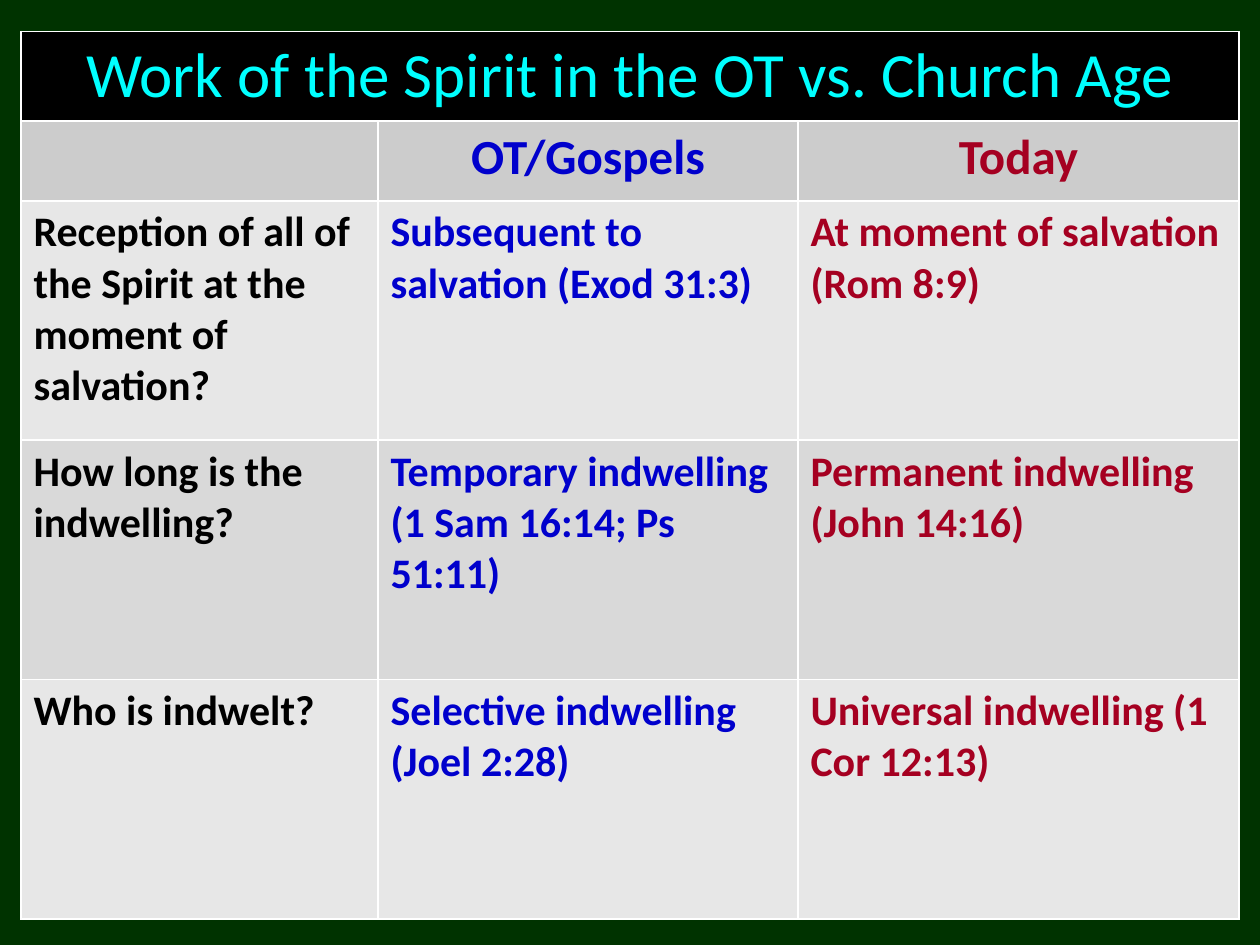
from lxml.etree import SubElement as Sub
from pptx import Presentation
from pptx.dml.color import RGBColor
from pptx.enum.text import MSO_ANCHOR as Anchor, PP_ALIGN as Align
from pptx.oxml.ns import qn
from pptx.util import Inches, Pt

WIDE, HIGH, PARTS = 10, 7.5, 60
BLUE, RED, BLACK, WHITE = "0000CC", "A50021", "000000", "FFFFFF"
INKS = [BLACK, BLUE, RED]

TITLE = "Work of the Spirit in the OT vs. Church Age"
HEADS = ["", "OT/Gospels", "Today"]
BODY = [
    ["Reception of all of the Spirit at the moment of salvation?",
     "Subsequent to salvation (Exod 31:3)",
     "At moment of salvation (Rom 8:9)"],
    ["How long is the indwelling?",
     "Temporary indwelling (1 Sam 16:14; Ps 51:11)",
     "Permanent indwelling (John 14:16)"],
    ["Who is indwelt?",
     "Selective indwelling (Joel 2:28)",
     "Universal indwelling (1 Cor 12:13)"],
]
COLS = [17, 20, 21]
ROWS = [5.6, 5.05, 15.2, 15.2, 15.2]


def tint(code):
    return RGBColor.from_string(code)


class Page:
    """Holds the text style and the slide, measured in 60 columns by 60 rows."""

    title = {"size": Pt(36), "bold": False}
    head = {"size": Pt(28), "bold": True}
    body = {"size": Pt(24), "bold": True}
    face = "Calibri"

    def __init__(self, deck, back):
        self.slide = deck.slides.add_slide(deck.slide_layouts[6])
        fill = self.slide.background.fill
        fill.solid()
        fill.fore_color.rgb = tint(back)

    def across(self, n):
        return Inches(WIDE * n / PARTS)

    def down(self, n):
        return Inches(HIGH * n / PARTS)

    def table(self, left, top, cols, rows):
        frame = self.slide.shapes.add_table(
            len(rows), len(cols), self.across(left), self.down(top),
            self.across(sum(cols)), self.down(sum(rows)))
        grid = frame.table
        grid.first_row = grid.horz_banding = False
        for col, n in zip(grid.columns, cols):
            col.width = self.across(n)
        for row, n in zip(grid.rows, rows):
            row.height = self.down(n)
        return grid

    def edge(self, cell, ink=WHITE, width=1):
        """Draw all four borders; call before the fill, which must follow them."""
        props = cell._tc.get_or_add_tcPr()
        for side in "LRTB":
            line = Sub(props, qn(f"a:ln{side}"), w=str(Pt(width)))
            Sub(Sub(line, qn("a:solidFill")), qn("a:srgbClr"), val=ink)

    def cell(self, cell, text, style, ink, fill, align=Align.LEFT):
        self.edge(cell)
        cell.fill.solid()
        cell.fill.fore_color.rgb = tint(fill)
        if not text:
            return
        para = cell.text_frame.paragraphs[0]
        para.alignment = align
        run = para.add_run()
        run.text = text
        for name, value in {**style, "name": self.face}.items():
            setattr(run.font, name, value)
        run.font.color.rgb = tint(ink)


def main():
    deck = Presentation()
    deck.slide_width, deck.slide_height = Inches(WIDE), Inches(HIGH)
    page = Page(deck, "003300")
    grid = page.table(1, 2, COLS, ROWS)

    banner = grid.cell(0, 0)
    banner.merge(grid.cell(0, len(COLS) - 1))
    banner.vertical_anchor = Anchor.MIDDLE
    for c, text in enumerate([TITLE, "", ""]):
        page.cell(grid.cell(0, c), text, page.title, "00FFFF", BLACK, Align.CENTER)

    for c, ink in enumerate(INKS):
        page.cell(grid.cell(1, c), HEADS[c], page.head, ink, "CCCCCC", Align.CENTER)
        for r, texts in enumerate(BODY):
            shade = "D9D9D9" if r % 2 else "E7E7E7"
            page.cell(grid.cell(r + 2, c), texts[c], page.body, ink, shade)

    deck.save("out.pptx")


if __name__ == "__main__":
    main()
